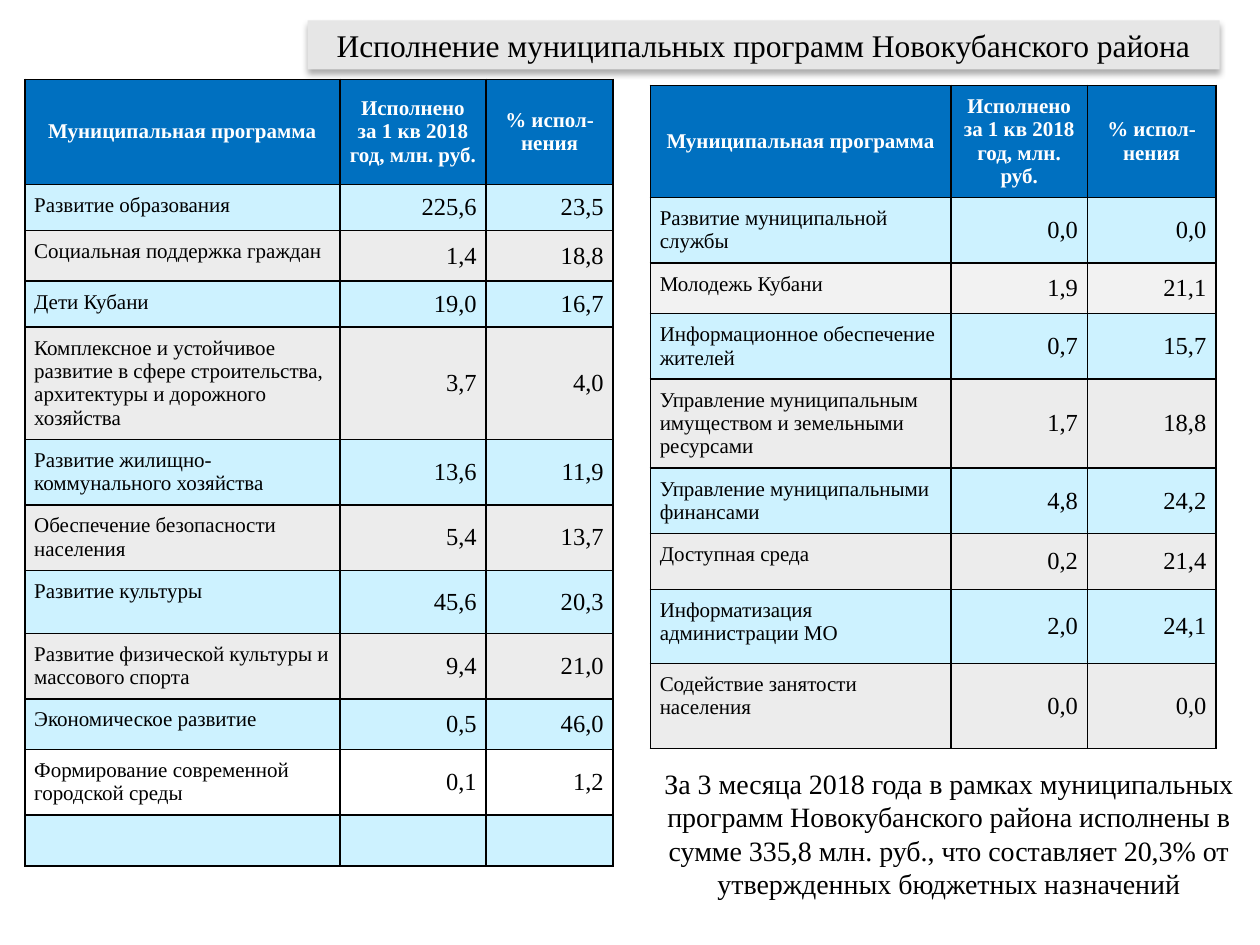
from lxml import etree
from pptx import Presentation
from pptx.dml.color import RGBColor
from pptx.enum.shapes import MSO_SHAPE
from pptx.enum.text import MSO_ANCHOR, PP_ALIGN
from pptx.oxml import parse_xml
from pptx.oxml.ns import nsdecls, qn
from pptx.util import Cm, Pt

RECTANGLE = MSO_SHAPE.RECTANGLE
TOP, MIDDLE = MSO_ANCHOR.TOP, MSO_ANCHOR.MIDDLE
LEFT, CENTER, RIGHT = PP_ALIGN.LEFT, PP_ALIGN.CENTER, PP_ALIGN.RIGHT
FONT = "Times New Roman"
COLORS = {
    "black": "000000", "white": "FFFFFF", "title": "E6E6E6", "header": "0070C0",
    "blue": "CDF2FF", "gray": "ECECEC", "light": "F2F2F2",
}

HEADER = ("Муниципальная программа", "Исполнено за 1 кв 2018 год, млн. руб.", "% испол-нения")
LEFT_ROWS = [
    (2.12, "header", HEADER),
    (0.89, "blue", ("Развитие образования", "225,6", "23,5")),
    (1.02, "gray", ("Социальная поддержка граждан", "1,4", "18,8")),
    (0.89, "blue", ("Дети Кубани", "19,0", "16,7")),
    (2.22, "gray", ("Комплексное и устойчивое развитие в сфере строительства, "
                    "архитектуры и дорожного хозяйства", "3,7", "4,0")),
    (1.29, "blue", ("Развитие жилищно-коммунального хозяйства", "13,6", "11,9")),
    (1.29, "gray", ("Обеспечение безопасности населения", "5,4", "13,7")),
    (1.27, "blue", ("Развитие культуры", "45,6", "20,3")),
    (1.29, "gray", ("Развитие физической культуры и массового спорта", "9,4", "21,0")),
    (1.02, "blue", ("Экономическое развитие", "0,5", "46,0")),
    (1.29, "white", ("Формирование современной городской среды", "0,1", "1,2")),
    (1.02, "blue", ("", "", "")),
]
RIGHT_ROWS = [
    (2.22, "header", HEADER),
    (1.29, "blue", ("Развитие муниципальной службы", "0,0", "0,0")),
    (1.02, "light", ("Молодежь Кубани", "1,9", "21,1")),
    (1.29, "blue", ("Информационное обеспечение жителей", "0,7", "15,7")),
    (1.73, "gray", ("Управление муниципальным имуществом и земельными ресурсами", "1,7", "18,8")),
    (1.29, "blue", ("Управление муниципальными финансами", "4,8", "24,2")),
    (1.13, "gray", ("Доступная среда", "0,2", "21,4")),
    (1.49, "blue", ("Информатизация администрации МО", "2,0", "24,1")),
    (1.71, "gray", ("Содействие занятости населения", "0,0", "0,0")),
]
TITLE = "Исполнение муниципальных программ Новокубанского района"
SUMMARY = ("За 3 месяца 2018 года в рамках муниципальных программ Новокубанского района "
           "исполнены в сумме 335,8 млн. руб., что составляет 20,3% от утвержденных "
           "бюджетных назначений")


def set_fill(target, color):
    """Fill a shape or cell with a named colour."""
    target.fill.solid()
    target.fill.fore_color.rgb = RGBColor.from_string(COLORS[color])


def write_text(text_frame, text, size, alignment, color="black", bold=False):
    """Put one formatted paragraph in a text frame."""
    text_frame.text = text
    text_frame.word_wrap = True
    paragraph = text_frame.paragraphs[0]
    paragraph.alignment = alignment
    for run in paragraph.runs:
        run.font.name = FONT
        run.font.size = Pt(size)
        run.font.bold = bold
        run.font.color.rgb = RGBColor.from_string(COLORS[color])


def add_borders(cell):
    """Draw thin black lines on all four sides of a cell."""
    properties = cell._tc.get_or_add_tcPr()
    for side in ("lnL", "lnR", "lnT", "lnB"):
        line = etree.SubElement(properties, qn(f"a:{side}"), w=str(Pt(1)))
        fill = etree.SubElement(line, qn("a:solidFill"))
        etree.SubElement(fill, qn("a:srgbClr"), val=COLORS["black"])


def format_cell(cell, text, color, column):
    """Style a cell by its row colour and column."""
    add_borders(cell)
    set_fill(cell, color)
    if not text:
        return
    cell.margin_left = cell.margin_right = cell.margin_top = cell.margin_bottom = Cm(0.19)
    is_header = color == "header"
    cell.vertical_anchor = MIDDLE if is_header or column else TOP
    if is_header:
        write_text(cell.text_frame, text, 12, CENTER, "white", True)
    elif column:
        write_text(cell.text_frame, text, 14, RIGHT)
    else:
        write_text(cell.text_frame, text, 12, LEFT)


def add_program_table(slide, left, top, widths, rows):
    """Add a table of programmes with given column widths."""
    height = sum(row[0] for row in rows)
    frame = slide.shapes.add_table(len(rows), len(widths), Cm(left), Cm(top),
                                   Cm(sum(widths)), Cm(height))
    table = frame.table
    table.horz_banding = False
    for column, width in zip(table.columns, widths):
        column.width = Cm(width)
    for row, (row_height, color, texts) in zip(table.rows, rows):
        row.height = Cm(row_height)
        for index, text in enumerate(texts):
            format_cell(row.cells[index], text, color, index)


def add_title(slide):
    """Add the grey title bar with its soft shadow."""
    shape = slide.shapes.add_shape(RECTANGLE, Cm(6.2), Cm(0.41), Cm(18.39), Cm(0.99))
    set_fill(shape, "title")
    shape.line.fill.background()
    shape.text_frame.vertical_anchor = MIDDLE
    write_text(shape.text_frame, TITLE, 18, CENTER)
    shape._element.spPr.append(parse_xml(
        f'<a:effectLst {nsdecls("a")}><a:outerShdw blurRad="{Pt(3.5)}" dist="{Pt(2.2)}" '
        f'dir="5400000" rotWithShape="0"><a:srgbClr val="{COLORS["black"]}">'
        '<a:alpha val="32000"/></a:srgbClr></a:outerShdw></a:effectLst>'))


def add_summary(slide):
    """Add the closing statement below the right table."""
    box = slide.shapes.add_textbox(Cm(13.11), Cm(15.32), Cm(12.04), Cm(3))
    write_text(box.text_frame, SUMMARY, 16, CENTER)


def main():
    """Build and save the presentation."""
    presentation = Presentation()
    presentation.slide_width = Cm(25.4)
    presentation.slide_height = Cm(19.05)
    slide = presentation.slides.add_slide(presentation.slide_layouts[6])
    add_title(slide)
    add_program_table(slide, 13.11, 1.72, (6.06, 2.75, 2.59), RIGHT_ROWS)
    add_program_table(slide, 0.5, 1.6, (6.35, 2.95, 2.56), LEFT_ROWS)
    add_summary(slide)
    presentation.save("out.pptx")


if __name__ == "__main__":
    main()
